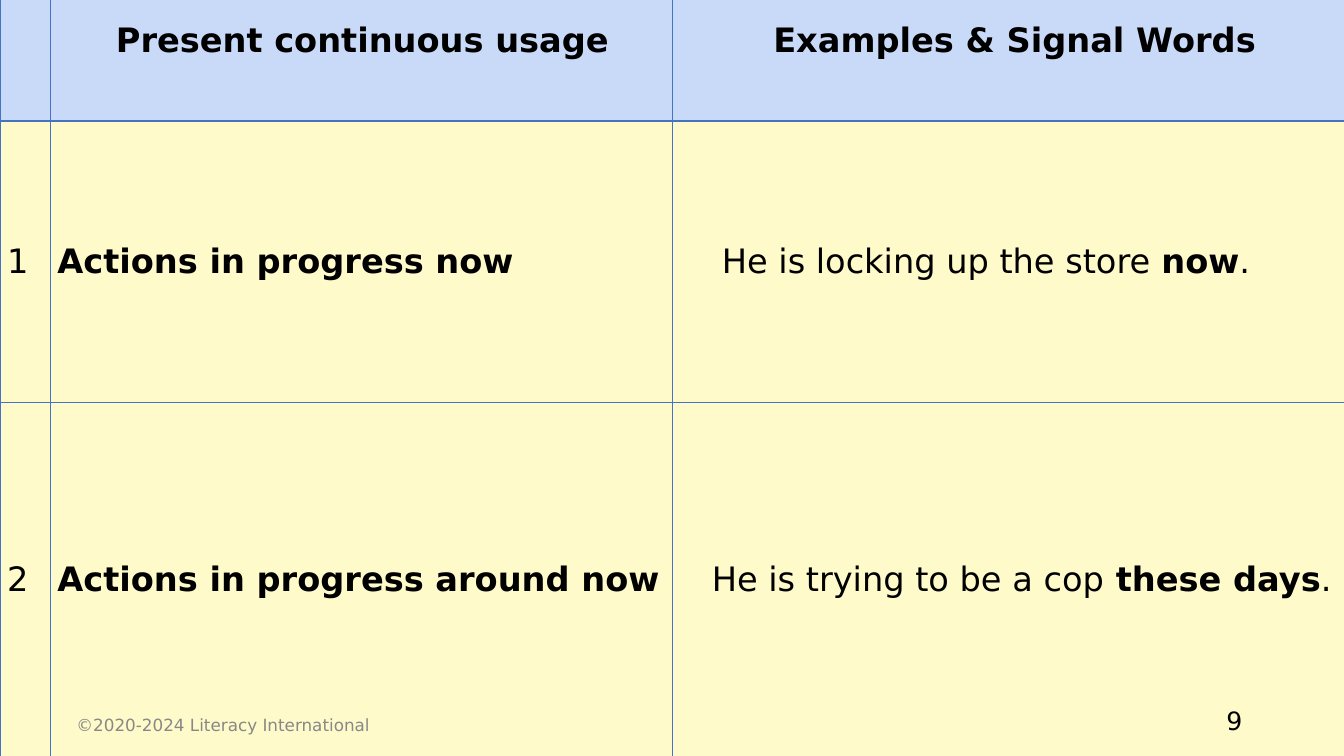
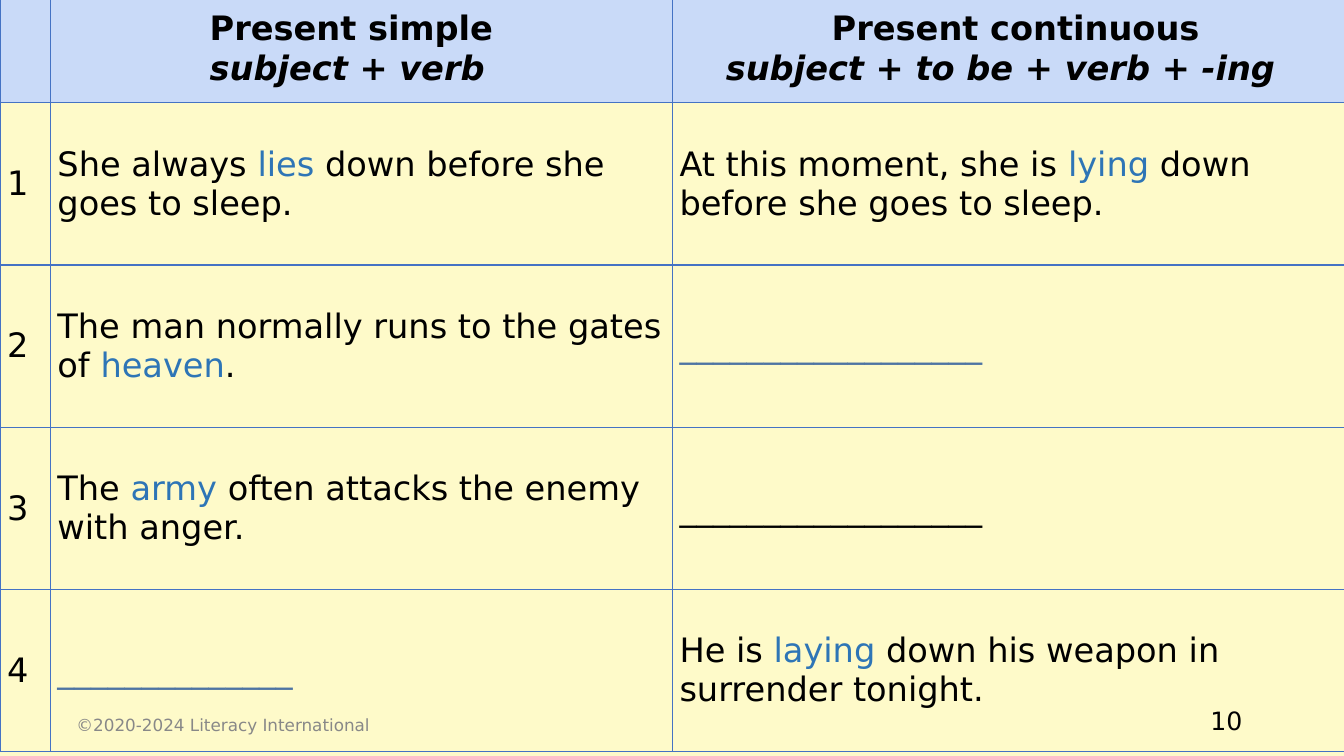
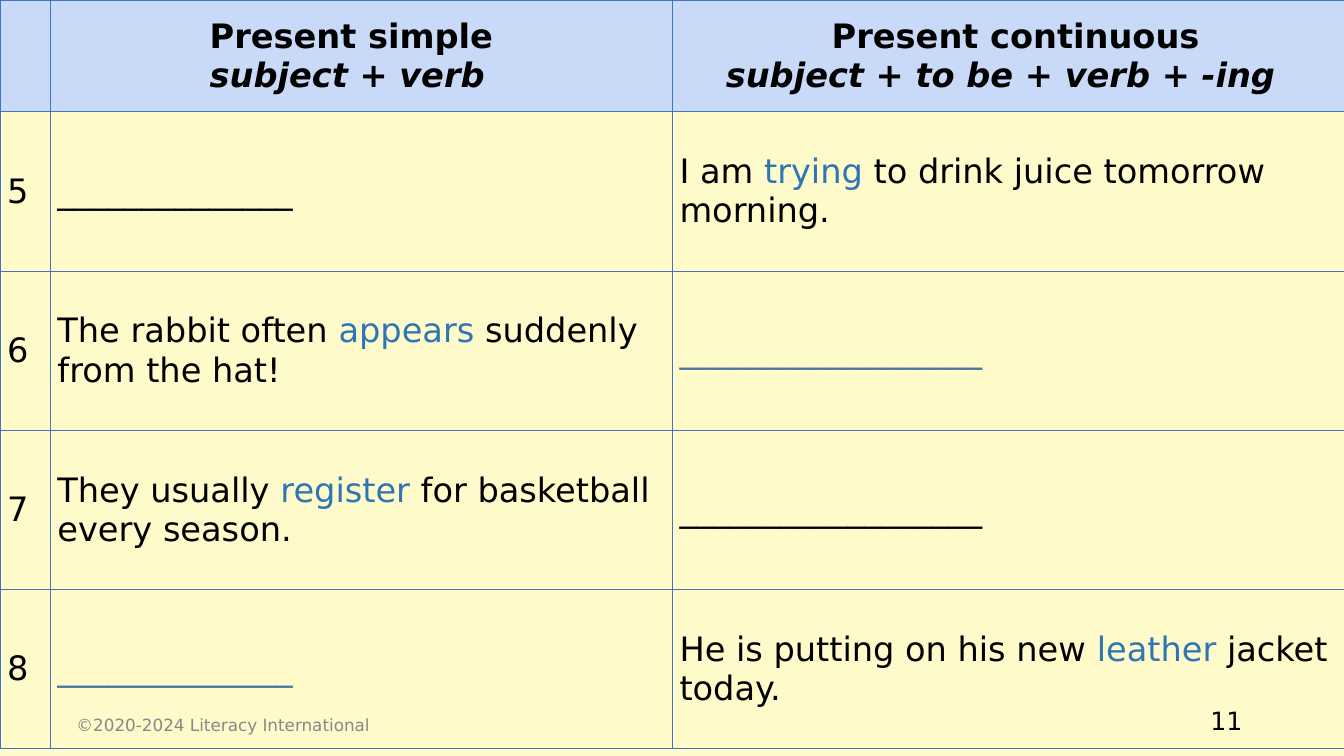
"""Build three grammar slides on the present simple and present continuous."""
from dataclasses import dataclass

from lxml import etree
from pptx import Presentation
from pptx.dml.color import RGBColor
from pptx.enum.text import MSO_ANCHOR, PP_ALIGN
from pptx.oxml.ns import qn
from pptx.util import Inches, Pt

MIDDLE = MSO_ANCHOR.MIDDLE
LEFT, RIGHT = PP_ALIGN.LEFT, PP_ALIGN.RIGHT
BLANK_LAYOUT = 6


@dataclass(frozen=True)
class Theme:
    font: str = "DejaVu Sans"
    page: str = "FEFAC9"
    header: str = "C9DAF8"
    border: str = "4472C4"
    ink: str = "000000"
    keyword: str = "2E75B6"
    answer: str = "4E74A3"
    muted: str = "888888"
    body_size: int = 24
    number_size: int = 18
    copyright_size: int = 12
    border_width: int = 1
    cell_margin: float = 0.07


THEME = Theme()
COPYRIGHT = "©2020-2024 Literacy International"
FIRST_PAGE = 9
COLUMN_WIDTHS = [0.5, 6.17, 6.67]
SHORT_BLANK = "_" * 14
LONG_BLANK = "_" * 18

usage_headers = [
    [(0.58, "Present continuous usage")],
    [(0.93, "Examples & Signal Words")],
]
tense_headers = [
    [(1.51, "Present simple"), (1.51, "subject + verb")],
    [(1.51, "Present continuous"), (0.46, "subject + to be + verb + -ing")],
]

lessons = [
    {
        "top": -0.39, "heights": [1.59, 2.79, 3.52], "headers": usage_headers,
        "first": 1, "bold_marks": True, "example_indents": [0.42, 0.32],
        "rows": [
            ("|Actions in progress now|", "He is locking up the store |now|."),
            ("|Actions in progress around now|", "He is trying to be a cop| these days|."),
        ],
    },
    {
        "top": -0.05, "heights": [1.07] + [1.61] * 4, "headers": tense_headers,
        "first": 1, "bold_marks": False, "example_indents": [0] * 4,
        "rows": [
            ("She always |lies |down before she goes to sleep.",
             "At this moment, she is |lying| down before she goes to sleep."),
            ("The man normally runs to the gates of |heaven|.", LONG_BLANK),
            ("The |army| often attacks the enemy with anger.", LONG_BLANK),
            (SHORT_BLANK, "He is |laying| down his weapon in surrender tonight."),
        ],
    },
    {
        "top": 0, "heights": [1.11] + [1.58] * 4, "headers": tense_headers,
        "first": 5, "bold_marks": False, "example_indents": [0] * 4,
        "rows": [
            (SHORT_BLANK, "I am |trying| to drink juice tomorrow morning."),
            ("The rabbit often |appears |suddenly from the hat!", LONG_BLANK),
            ("They usually |register| for basketball every season.", LONG_BLANK),
            (SHORT_BLANK, "He is putting on his new |leather| jacket today."),
        ],
    },
]


def style_run(run, size, color, bold=False, italic=False):
    run.font.name = THEME.font
    run.font.size = Pt(size)
    run.font.color.rgb = RGBColor.from_string(color)
    run.font.bold = bold
    run.font.italic = italic


def prepare_cell(cell):
    cell.vertical_anchor = MIDDLE
    cell.margin_left = cell.margin_right = Inches(THEME.cell_margin)
    cell.margin_top = cell.margin_bottom = Inches(THEME.cell_margin)
    properties = cell._tc.get_or_add_tcPr()
    for side in ("a:lnL", "a:lnR", "a:lnT", "a:lnB"):
        edge = etree.SubElement(properties, qn(side), w=str(Pt(THEME.border_width)))
        paint = etree.SubElement(edge, qn("a:solidFill"))
        etree.SubElement(paint, qn("a:srgbClr"), val=THEME.border)


deck = Presentation()
deck.slide_width = Inches(13.33)
deck.slide_height = Inches(7.5)
page_fill = deck.slide_master.background.fill
page_fill.solid()
page_fill.fore_color.rgb = RGBColor.from_string(THEME.page)

for page, lesson in enumerate(lessons, FIRST_PAGE):
    slide = deck.slides.add_slide(deck.slide_layouts[BLANK_LAYOUT])
    heights = lesson["heights"]
    grid = slide.shapes.add_table(
        len(heights), len(COLUMN_WIDTHS), Inches(0), Inches(lesson["top"]),
        Inches(sum(COLUMN_WIDTHS)), Inches(sum(heights))).table
    for column, width in zip(grid.columns, COLUMN_WIDTHS):
        column.width = Inches(width)
    for row, height in zip(grid.rows, heights):
        row.height = Inches(height)
    for cell in grid.iter_cells():
        prepare_cell(cell)
        cell.fill.background()

    for column in range(len(COLUMN_WIDTHS)):
        header_fill = grid.cell(0, column).fill
        header_fill.solid()
        header_fill.fore_color.rgb = RGBColor.from_string(THEME.header)
    for column, lines in enumerate(lesson["headers"], 1):
        frame = grid.cell(0, column).text_frame
        frame.text = "\n".join(text for _, text in lines)
        for index, (indent, _) in enumerate(lines):
            heading = frame.paragraphs[index]
            heading._p.get_or_add_pPr().set("marL", str(Inches(indent)))
            style_run(heading.runs[0], THEME.body_size, THEME.ink, True, index == 1)

    for row, sentences in enumerate(lesson["rows"], 1):
        number = lesson["first"] + row - 1
        for column, sentence in enumerate((str(number), *sentences)):
            paragraph = grid.cell(row, column).text_frame.paragraphs[0]
            if column == 2 and lesson["example_indents"][row - 1]:
                indent = Inches(lesson["example_indents"][row - 1])
                paragraph._p.get_or_add_pPr().set("marL", str(indent))
            is_blank = sentence in (SHORT_BLANK, LONG_BLANK)
            for part, words in enumerate(sentence.split("|")):
                if not words:
                    continue
                marked = part % 2 == 1
                bold = marked and lesson["bold_marks"]
                color = THEME.ink
                if marked and not bold:
                    color = THEME.keyword
                elif is_blank and number % 2 == 0:
                    color = THEME.answer
                run = paragraph.add_run()
                run.text = words
                style_run(run, THEME.body_size, color, bold)

    for text, left, top, width, size, color, alignment in (
        (str(page), 9.42, 6.95, 3, THEME.number_size, THEME.ink, RIGHT),
        (COPYRIGHT, 0.66, 6.99, 4.5, THEME.copyright_size, THEME.muted, LEFT),
    ):
        footer = slide.shapes.add_textbox(
            Inches(left), Inches(top), Inches(width), Inches(0.4)).text_frame
        footer.word_wrap = True
        footer.vertical_anchor = MIDDLE
        footer.text = text
        footer.paragraphs[0].alignment = alignment
        style_run(footer.paragraphs[0].runs[0], size, color)

deck.save("out.pptx")
